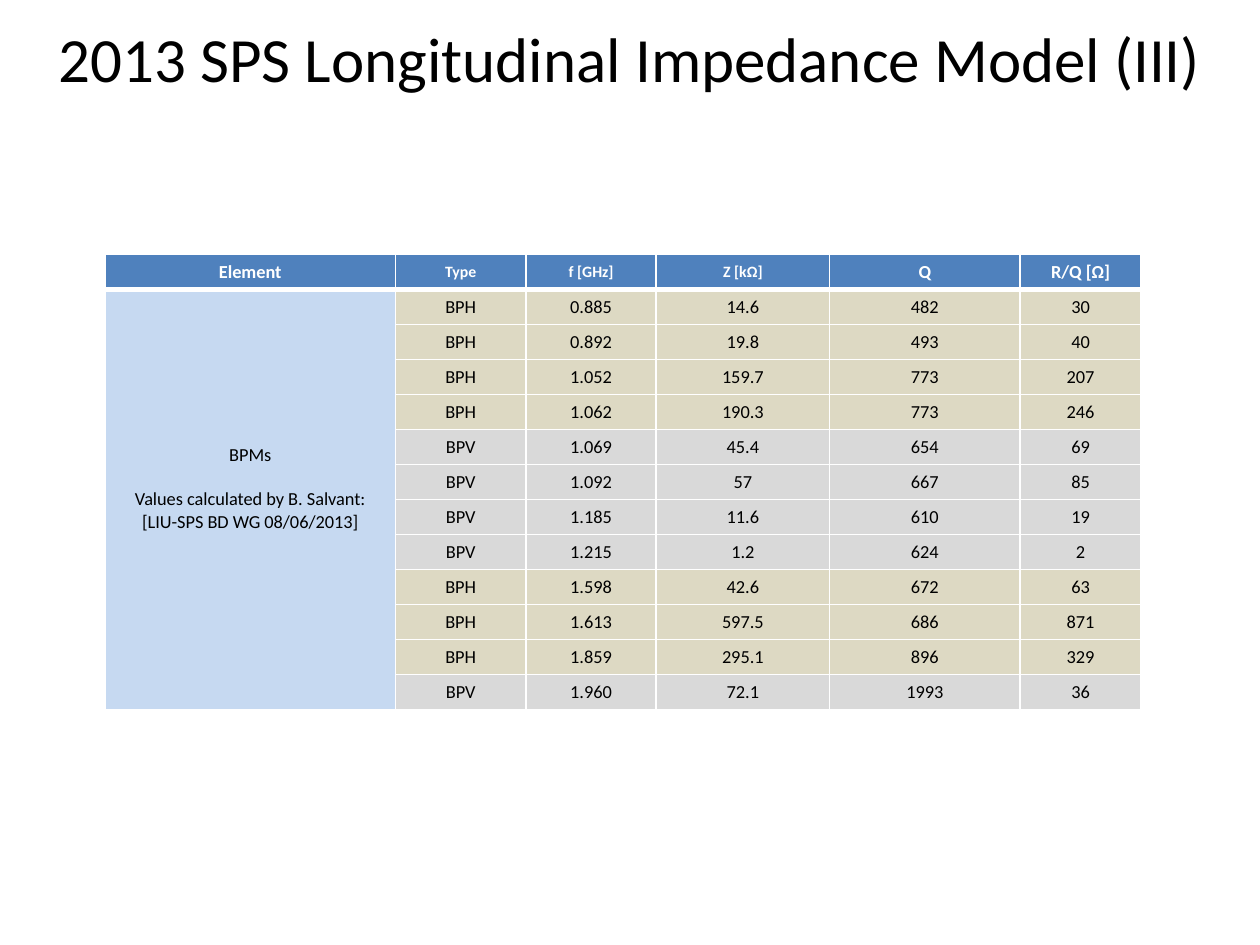
import pptx
import pptx.dml.color
import pptx.enum.text
import pptx.oxml
import pptx.oxml.ns
import pptx.util

Pt = pptx.util.Pt
RGB = pptx.dml.color.RGBColor
ALIGN = pptx.enum.text.PP_ALIGN
ANCHOR = pptx.enum.text.MSO_ANCHOR

BLACK = RGB(0x00, 0x00, 0x00)
WHITE = RGB(0xFF, 0xFF, 0xFF)
BLUE = RGB(0x4F, 0x81, 0xBD)
PALE = RGB(0xC6, 0xD9, 0xF1)
TAN = RGB(0xDD, 0xD9, 0xC3)
GREY = RGB(0xD9, 0xD9, 0xD9)

FONT = "Calibri"
SIZE = 10.5
LINE = 12.8
ROW = 20
WIDTHS = [166, 74.5, 74.5, 99, 109, 69]
HEADS = [("Element", SIZE), ("Type", 9), ("f [GHz]", 9),
         ("Z [kΩ]", 9), ("Q", SIZE), ("R/Q [Ω]", SIZE)]
FILLS = {"BPH": TAN, "BPV": GREY}
NOTE = "BPMs\nValues calculated by B. Salvant:\n[LIU-SPS BD WG 08/06/2013]"
MODES = [
    ("BPH", "0.885", "14.6", "482", "30"),
    ("BPH", "0.892", "19.8", "493", "40"),
    ("BPH", "1.052", "159.7", "773", "207"),
    ("BPH", "1.062", "190.3", "773", "246"),
    ("BPV", "1.069", "45.4", "654", "69"),
    ("BPV", "1.092", "57", "667", "85"),
    ("BPV", "1.185", "11.6", "610", "19"),
    ("BPV", "1.215", "1.2", "624", "2"),
    ("BPH", "1.598", "42.6", "672", "63"),
    ("BPH", "1.613", "597.5", "686", "871"),
    ("BPH", "1.859", "295.1", "896", "329"),
    ("BPV", "1.960", "72.1", "1993", "36"),
]


def write(frame, text, size=SIZE, color=BLACK, bold=False):
    """Fill a text frame with centred paragraphs, one per line of text."""
    for i, line in enumerate(text.split("\n")):
        para = frame.paragraphs[0] if i == 0 else frame.add_paragraph()
        para.alignment = ALIGN.CENTER
        run = para.add_run()
        run.text = line
        run.font.name = FONT
        run.font.size = Pt(size)
        run.font.bold = bold
        run.font.color.rgb = color


def edge(cell, top=1, bottom=1):
    """Draw white borders; they must come before the fill in the XML."""
    props = cell._tc.get_or_add_tcPr()
    for side, width in (("L", 1), ("R", 1), ("T", top), ("B", bottom)):
        props.append(pptx.oxml.parse_xml(
            f'<a:ln{side} {pptx.oxml.ns.nsdecls("a")} w="{Pt(width)}">'
            f'<a:solidFill><a:srgbClr val="{WHITE}"/></a:solidFill>'
            f'</a:ln{side}>'))


def paint(cell, fill, **sides):
    edge(cell, **sides)
    cell.fill.solid()
    cell.fill.fore_color.rgb = fill
    cell.vertical_anchor = ANCHOR.MIDDLE


def title(slide, text):
    box = slide.shapes.add_textbox(Pt(0), Pt(0), Pt(720), Pt(66))
    frame = box.text_frame
    frame.word_wrap = True
    frame.vertical_anchor = ANCHOR.MIDDLE
    write(frame, text, size=36)


def table(slide):
    count = len(MODES) + 1
    grid = slide.shapes.add_table(
        count, len(WIDTHS), Pt(60), Pt(145.5),
        Pt(sum(WIDTHS)), Pt(ROW * count)).table
    for col, width in zip(grid.columns, WIDTHS):
        col.width = Pt(width)
    for row in grid.rows:
        row.height = Pt(ROW)

    for c, (text, size) in enumerate(HEADS):
        cell = grid.cell(0, c)
        paint(cell, BLUE, bottom=3)
        write(cell.text_frame, text, size=size, color=WHITE, bold=True)

    for r, mode in enumerate(MODES, 1):
        top = 3 if r == 1 else 1
        paint(grid.cell(r, 0), PALE, top=top)
        for c, text in enumerate(mode, 1):
            cell = grid.cell(r, c)
            paint(cell, FILLS[mode[0]], top=top)
            write(cell.text_frame, text)

    label = grid.cell(1, 0)
    label.merge(grid.cell(count - 1, 0))
    label.margin_bottom = Pt(3.6 + LINE)
    write(label.text_frame, NOTE)
    label.text_frame.paragraphs[1].space_before = Pt(LINE)


def main():
    deck = pptx.Presentation()
    deck.slide_width = Pt(720)
    deck.slide_height = Pt(540)
    slide = deck.slides.add_slide(deck.slide_layouts[6])
    title(slide, "2013 SPS Longitudinal Impedance Model (III)")
    table(slide)
    deck.save("out.pptx")


if __name__ == "__main__":
    main()
